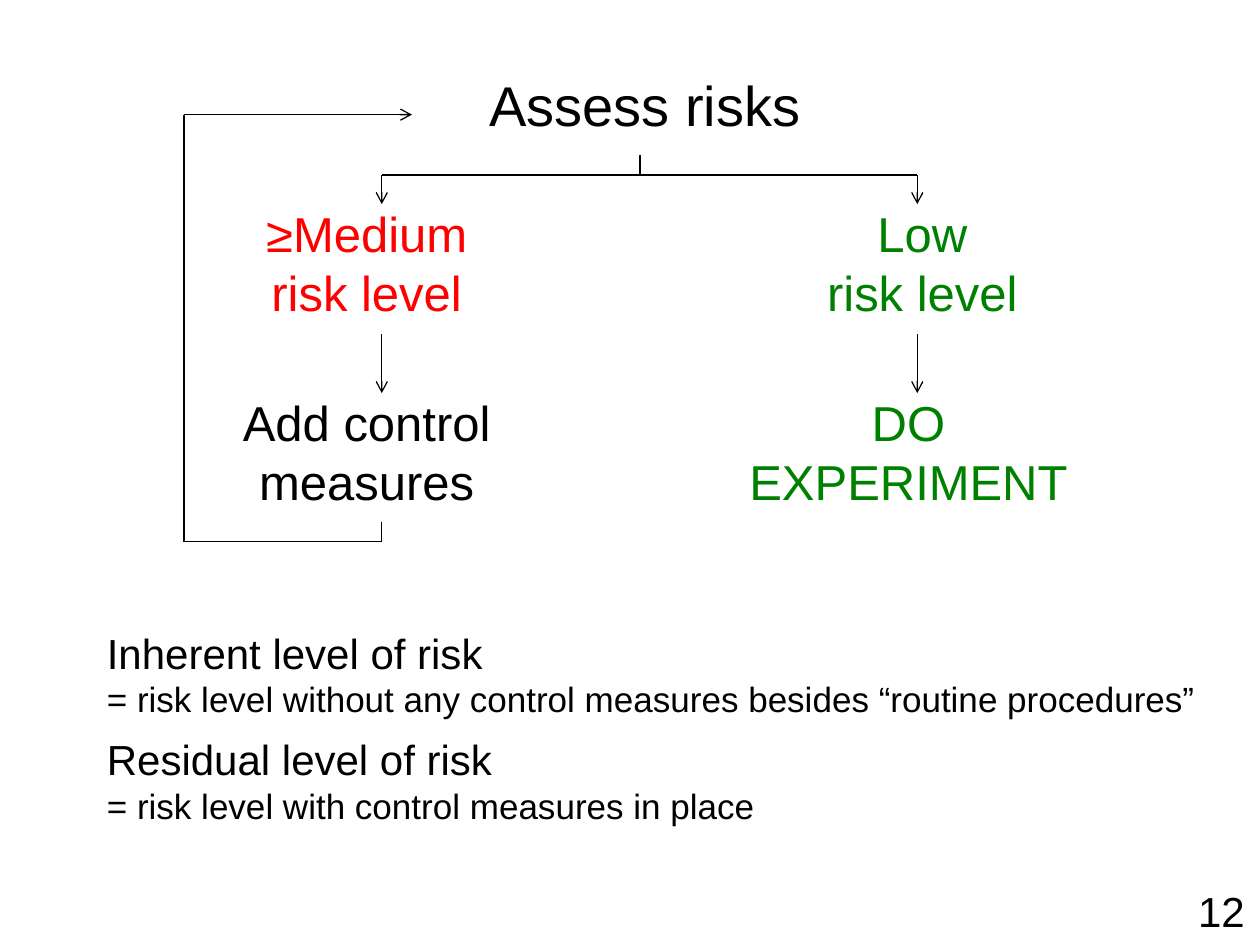
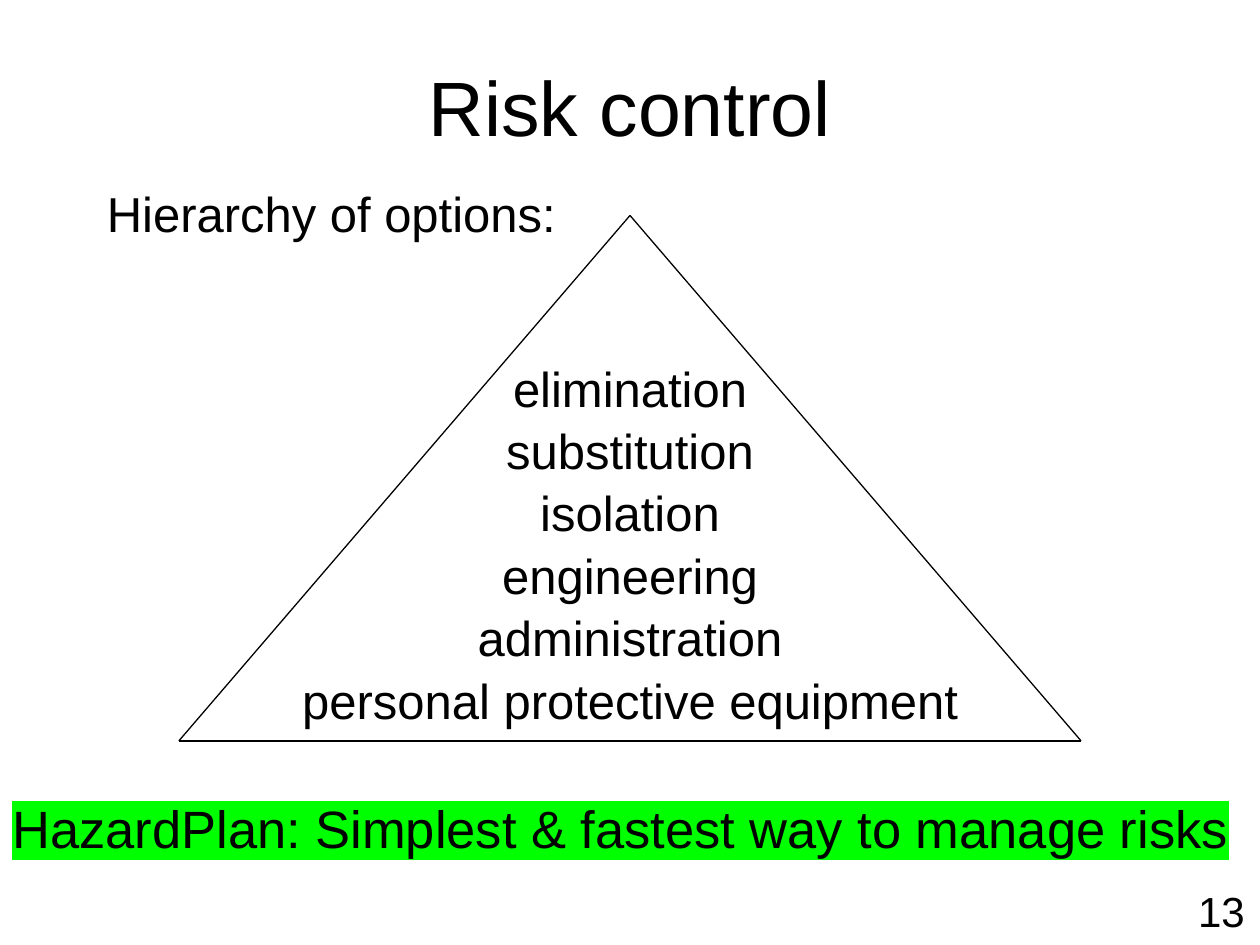
from itertools import pairwise

from lxml import etree
from pptx import Presentation
from pptx import util as u
from pptx.dml.color import RGBColor
from pptx.enum import shapes, text
from pptx.oxml.ns import qn

HUE = {"ink": "000000", "stop": "FF0000", "go": "008000", "mark": "00FF00"}
FONT = "Arial"
MID, LEFT = text.PP_ALIGN.CENTER, text.PP_ALIGN.LEFT

# Flow chart: columns and rows in inches
BACK, MED, START, LOW = 1.46, 3.03, 5.08, 7.28
TOP, FORK, LOOP = 0.91, 1.39, 4.3
ROWS = [1.78, 3.28]
LABELS = [  # left, width, row, colour, lines
    (1.06, 3.7, 0, "stop", ["≥Medium", "risk level"]),
    (5.47, 3.7, 0, "go", ["Low", "risk level"]),
    (1.06, 3.7, 1, "ink", ["Add control measures"]),
    (5.79, 2.84, 1, "go", ["DO", "EXPERIMENT"]),
]
PLAIN = [
    [(START, 1.23), (START, FORK)],
    [(MED, FORK), (LOW, FORK)],
]
ARROWS = [[(x, a), (x, b)] for x in (MED, LOW) for a, b in ((FORK, 1.62), (2.65, 3.12))]
ARROWS.append([(MED, 4.14), (MED, LOOP), (BACK, LOOP), (BACK, TOP), (3.27, TOP)])
TERMS = [
    ("Inherent level of risk",
     "= risk level without any control measures besides “routine procedures”"),
    ("Residual level of risk", "= risk level with control measures in place"),
]

# Pyramid
LEAD = "Hierarchy of options:"
STEPS = ["elimination", "substitution", "isolation", "engineering",
         "administration", "personal protective equipment"]
PEAK, FOOT_L, FOOT_R = (5, 1.71), (1.42, 5.88), (8.58, 5.88)
SLOGAN = "HazardPlan: Simplest & fastest way to manage risks"


def write(slide, at, lines, anchor=text.MSO_ANCHOR.TOP):
    """Add a text box; each line is (words, size, format dict)."""
    frame = slide.shapes.add_textbox(*map(u.Inches, at)).text_frame
    frame.word_wrap, frame.vertical_anchor = True, anchor
    for i, (words, size, form) in enumerate(lines):
        para = frame.add_paragraph() if i else frame.paragraphs[0]
        run = para.add_run()
        run.text = words
        run.font.size, run.font.name = u.Pt(size), FONT
        form = dict(form)
        run.font.color.rgb = RGBColor.from_string(HUE[form.pop("hue", "ink")])
        mark = form.pop("mark", None)
        if mark:
            glow = etree.Element(qn("a:highlight"))
            etree.SubElement(glow, qn("a:srgbClr"), val=HUE[mark])
            run.font._element.find(qn("a:latin")).addprevious(glow)
        for key, val in form.items():
            setattr(para, key, val)


def title(slide, at, words, size):
    write(slide, at, [(words, size, {"alignment": MID})], text.MSO_ANCHOR.MIDDLE)


def trace(slide, points, arrow=False):
    """Join the points with straight lines, with an arrowhead at the last if asked."""
    for a, b in pairwise(points):
        line = slide.shapes.add_connector(
            shapes.MSO_CONNECTOR.STRAIGHT, *map(u.Inches, a + b))
        line.line.width = u.Pt(0.75)
        line.line.color.rgb = RGBColor.from_string(HUE["ink"])
        etree.SubElement(line._element.spPr, qn("a:effectLst"))
        if arrow and b == points[-1]:
            etree.SubElement(line.line._get_or_add_ln(), qn("a:tailEnd"), type="arrow")


def flow(slide):
    title(slide, (3.27, 0.52, 3.7, 0.61), "Assess risks", 32)
    for left, wide, row, hue, lines in LABELS:
        form = {"hue": hue, "alignment": MID}
        write(slide, (left, ROWS[row], wide, 0.61),
              [(t, 28, form) for t in lines], text.MSO_ANCHOR.MIDDLE)
    for points in PLAIN:
        trace(slide, points)
    for points in ARROWS:
        trace(slide, points, arrow=True)
    notes = []
    for i, (term, sense) in enumerate(TERMS):
        gap = {"space_before": u.Pt(8 * i)}
        notes += [(term, 24, gap), (sense, 20, {})]
    write(slide, (0.75, 4.93, 8.9, 1.89), notes)


def tower(slide):
    title(slide, (0.75, 0.21, 8.5, 1.25), "Risk control", 44)
    body = [(LEAD, 28, {"alignment": LEFT, "line_spacing": 0.9})]
    for i, step in enumerate(STEPS):
        gap = u.Pt(5.4 if i else 69.5)
        body.append((step, 28, {"alignment": MID, "line_spacing": 0.9,
                                "space_before": gap}))
    write(slide, (0.75, 1.46, 8.5, 4.65), body)
    trace(slide, [PEAK, FOOT_L, FOOT_R, PEAK])
    write(slide, (0, 6.27, 10, 1.01), [(SLOGAN, 30, {"mark": "mark"})])


def main():
    deck = Presentation()
    deck.slide_width, deck.slide_height = u.Inches(10), u.Inches(7.5)
    for page, draw in enumerate((flow, tower), 12):
        slide = deck.slides.add_slide(deck.slide_layouts[6])
        draw(slide)
        write(slide, (9.41, 6.98, 0.59, 0.5), [(str(page), 24, {})])
    deck.save("out.pptx")


if __name__ == "__main__":
    main()
